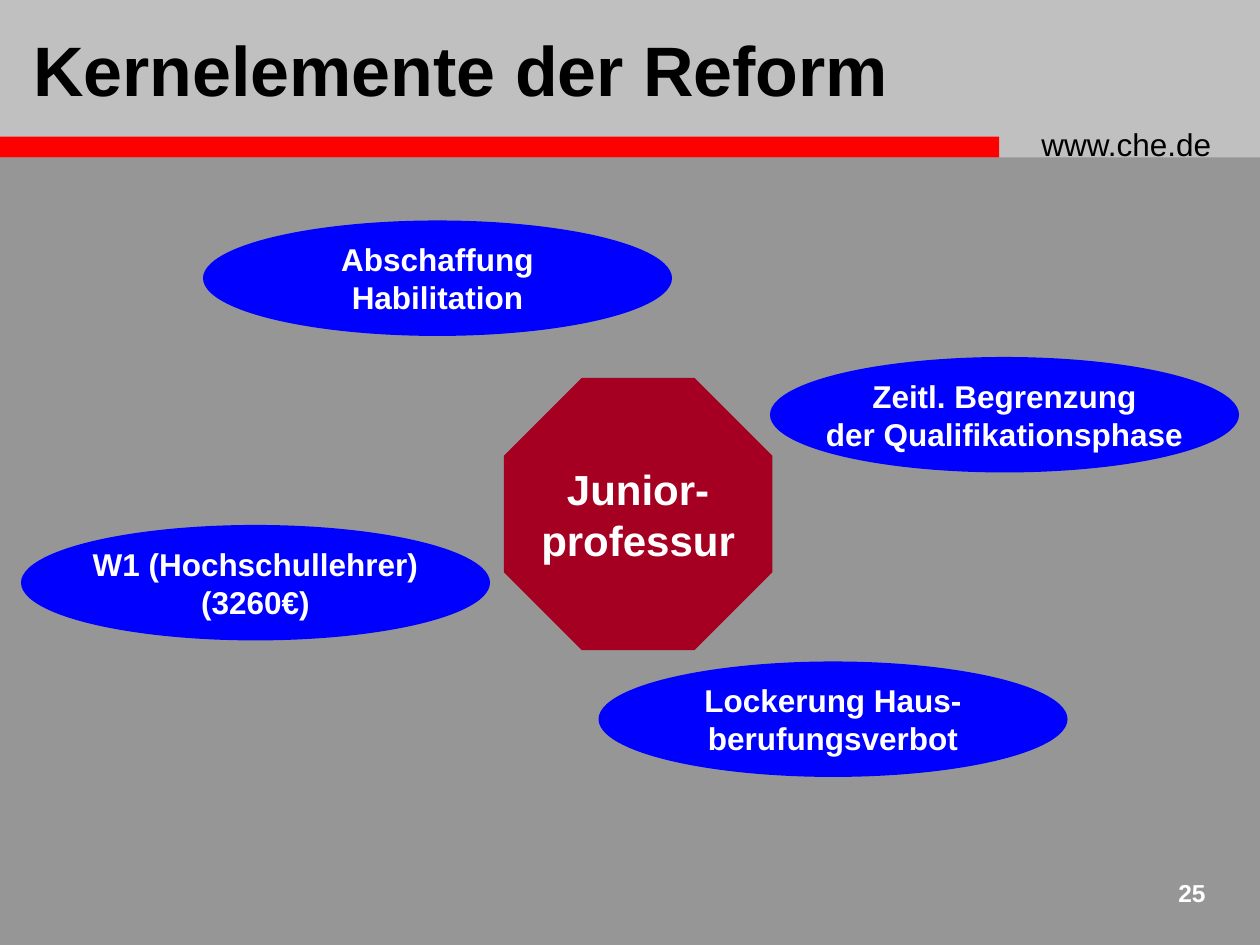
"""Build the slide on the core elements of the reform."""
from pptx import Presentation
from pptx.dml.color import RGBColor
from pptx.enum.shapes import MSO_SHAPE
from pptx.enum.text import MSO_ANCHOR, PP_ALIGN
from pptx.util import Inches, Pt

RECT, OVAL, OCTAGON = MSO_SHAPE.RECTANGLE, MSO_SHAPE.OVAL, MSO_SHAPE.OCTAGON
TOP, MIDDLE = MSO_ANCHOR.TOP, MSO_ANCHOR.MIDDLE
LEFT, CENTER, RIGHT = PP_ALIGN.LEFT, PP_ALIGN.CENTER, PP_ALIGN.RIGHT

GRAY = RGBColor(0x96, 0x96, 0x96)
SILVER = RGBColor(0xC0, 0xC0, 0xC0)
RED = RGBColor(0xFF, 0x00, 0x00)
BLUE = RGBColor(0x00, 0x00, 0xFF)
WINE = RGBColor(0xA5, 0x00, 0x21)
WHITE = RGBColor(0xFF, 0xFF, 0xFF)
BLACK = RGBColor(0x00, 0x00, 0x00)

FONT = "Arial"
WIDE, HIGH = Inches(10), Inches(7.5)
COLS, ROWS = 120, 90
OVAL_W, OVAL_H = 44.67, 11
OVALS = [
    (2, 50, ["W1 (Hochschullehrer)", "(3260€)"]),
    (19.33, 21, ["Abschaffung", "Habilitation"]),
    (57, 63, ["Lockerung Haus-", "berufungsverbot"]),
    (73.33, 34, ["Zeitl. Begrenzung", "der Qualifikationsphase"]),
]


def place(col, row, cols, rows):
    """Turn grid units into left, top, width and height."""
    return (round(WIDE * col / COLS), round(HIGH * row / ROWS),
            round(WIDE * cols / COLS), round(HIGH * rows / ROWS))


def write(frame, lines, size, color, bold=True, align=LEFT, anchor=TOP):
    """Write the lines as one paragraph with line breaks."""
    frame.vertical_anchor = anchor
    para = frame.paragraphs[0]
    para.alignment = align
    for num, line in enumerate(lines):
        if num:
            para.add_line_break()
        run = para.add_run()
        run.text = line
        run.font.name = FONT
        run.font.size = Pt(size)
        run.font.bold = bold
        run.font.color.rgb = color


def add_form(slide, kind, box, fill):
    """Add a plain filled shape without line or shadow."""
    form = slide.shapes.add_shape(kind, *place(*box))
    form.fill.solid()
    form.fill.fore_color.rgb = fill
    form.line.fill.background()
    form.shadow.inherit = False
    return form


def add_node(slide, kind, box, fill, lines, size):
    """Add a filled shape with centred white text."""
    node = add_form(slide, kind, box, fill)
    node.text_frame.word_wrap = False
    write(node.text_frame, lines, size, WHITE, align=CENTER, anchor=MIDDLE)
    return node


def add_label(slide, box, text, size, color, **style):
    """Add a wrapped text box."""
    frame = slide.shapes.add_textbox(*place(*box)).text_frame
    frame.word_wrap = True
    write(frame, [text], size, color, **style)


def main():
    """Build and save the slide."""
    deck = Presentation()
    deck.slide_width, deck.slide_height = WIDE, HIGH
    slide = deck.slides.add_slide(deck.slide_layouts[6])
    slide.background.fill.solid()
    slide.background.fill.fore_color.rgb = GRAY

    add_form(slide, RECT, (0, 0, COLS, 15), SILVER)
    add_form(slide, RECT, (0, 13, 95.16, 2), RED)
    add_label(slide, (98, 11.28, 21, 4.8), "www.che.de", 18, BLACK, bold=False)
    add_label(slide, (109, 83, 7, 5), "25", 14, WHITE, align=RIGHT)
    add_label(slide, (2, 0, 97, 13), "Kernelemente der Reform", 40, BLACK,
              anchor=MIDDLE)

    for col, row, lines in OVALS:
        add_node(slide, OVAL, (col, row, OVAL_W, OVAL_H), BLUE, lines, 18)
    core = add_node(slide, OCTAGON, (48, 36, 25.56, 25.92), WINE,
                    ["Junior-", "professur"], 24)
    core.adjustments[0] = 0.29

    deck.save("out.pptx")


if __name__ == "__main__":
    main()
